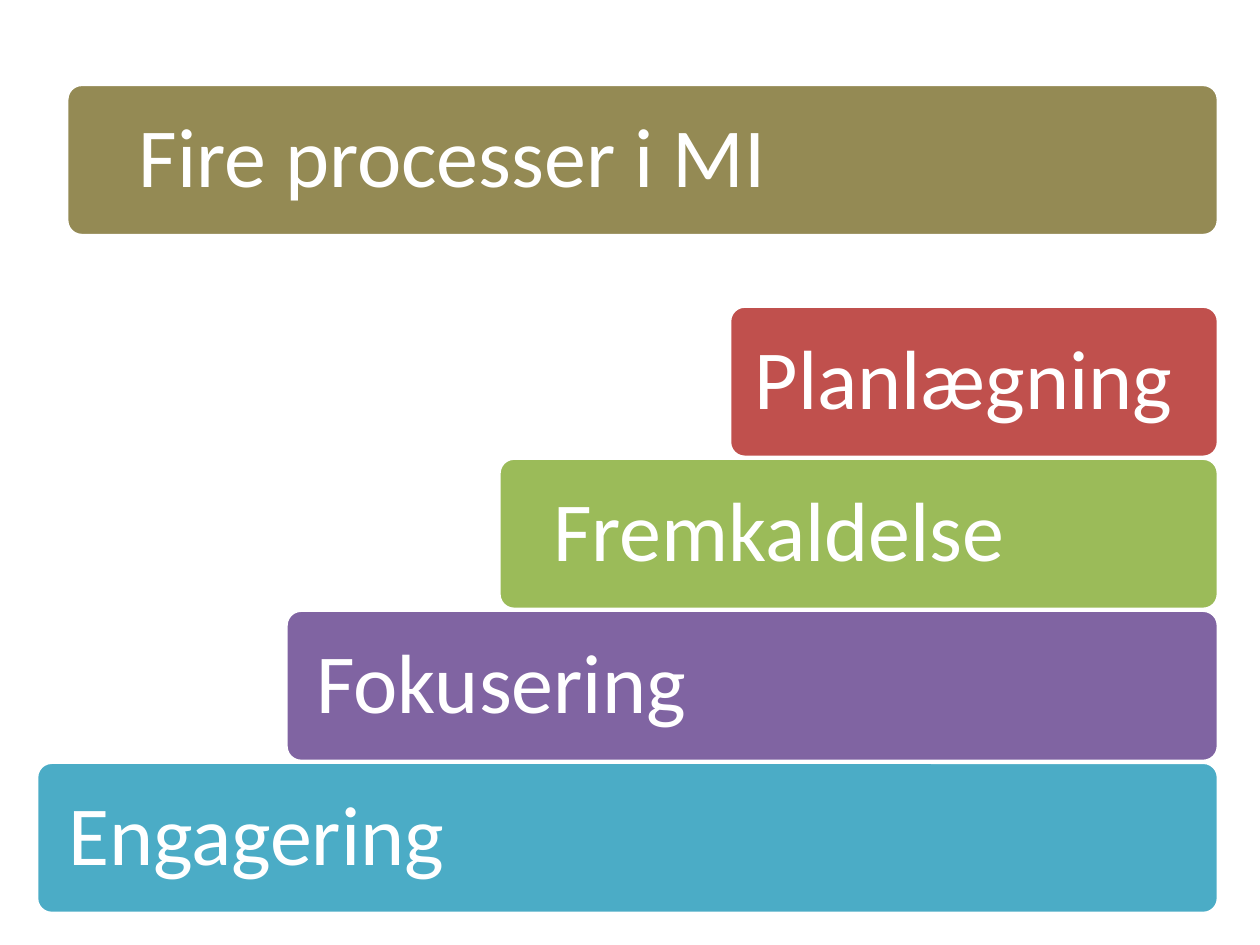
from dataclasses import dataclass

import pptx
import pptx.dml.color
import pptx.enum.shapes
import pptx.enum.text
import pptx.util

Inches = pptx.util.Inches
RGBColor = pptx.dml.color.RGBColor

WHITE = RGBColor(0xFF, 0xFF, 0xFF)
OLIVE = RGBColor(0x94, 0x8A, 0x54)
RED = RGBColor(0xC0, 0x50, 0x4D)
GREEN = RGBColor(0x9B, 0xBB, 0x59)
PURPLE = RGBColor(0x80, 0x64, 0xA2)
TEAL = RGBColor(0x4B, 0xAC, 0xC6)

# Bars share a right edge and a height; the steps are evenly stacked
RIGHT = 9.67
BAR_HEIGHT = 1.2
TITLE_TOP = 0.67
FIRST_STEP_TOP = 6.05
LAST_STEP_TOP = 2.43
TEXT_OFFSET = 0.04
TEXT_HEIGHT = 1.13
TEXT_INSET = 0.2


@dataclass
class Bar:
    text: str
    color: RGBColor
    left: float
    text_left: float
    text_width: float


TITLE = Bar("Fire processer i MI", OLIVE, 0.53, 0.9, 8.05)
STEPS = [
    Bar("Engagering", TEAL, 0.29, 0.34, 7.31),
    Bar("Fokusering", PURPLE, 2.27, 2.31, 5.78),
    Bar("Fremkaldelse", GREEN, 3.96, 4.19, 4.25),
    Bar("Planlægning", RED, 5.79, 5.79, 3.87),
]


def add_bar(s: pptx.slide.Slide, bar: Bar, top: float) -> None:
    group = s.shapes.add_group_shape()

    # Coloured bar
    sp = group.shapes.add_shape(
        pptx.enum.shapes.MSO_SHAPE.ROUNDED_RECTANGLE,
        Inches(bar.left), Inches(top),
        Inches(RIGHT - bar.left), Inches(BAR_HEIGHT),
    )
    sp.adjustments[0] = 0.1
    sp.shadow.inherit = False
    sp.fill.solid()
    sp.fill.fore_color.rgb = bar.color
    sp.line.color.rgb = WHITE
    sp.line.width = pptx.util.Pt(2)

    # Label
    label = group.shapes.add_textbox(
        Inches(bar.text_left), Inches(top + TEXT_OFFSET),
        Inches(bar.text_width), Inches(TEXT_HEIGHT),
    )
    tf = label.text_frame
    tf.word_wrap = True
    tf.vertical_anchor = pptx.enum.text.MSO_ANCHOR.MIDDLE
    tf.margin_left = tf.margin_right = Inches(TEXT_INSET)
    tf.margin_top = tf.margin_bottom = Inches(TEXT_INSET)
    p = tf.paragraphs[0]
    p.line_spacing = 0.9
    r = p.add_run()
    r.text = bar.text
    r.font.name = "Calibri"
    r.font.size = pptx.util.Pt(48)
    r.font.color.rgb = WHITE


def main() -> None:
    prs = pptx.Presentation()
    prs.slide_width = Inches(10)
    prs.slide_height = Inches(7.5)
    s = prs.slides.add_slide(prs.slide_layouts[6])

    # Staircase, from the bottom step up
    pitch = (FIRST_STEP_TOP - LAST_STEP_TOP) / (len(STEPS) - 1)
    for i, step in enumerate(STEPS):
        add_bar(s, step, FIRST_STEP_TOP - i * pitch)

    # Title bar
    add_bar(s, TITLE, TITLE_TOP)

    prs.save("out.pptx")


if __name__ == "__main__":
    main()
